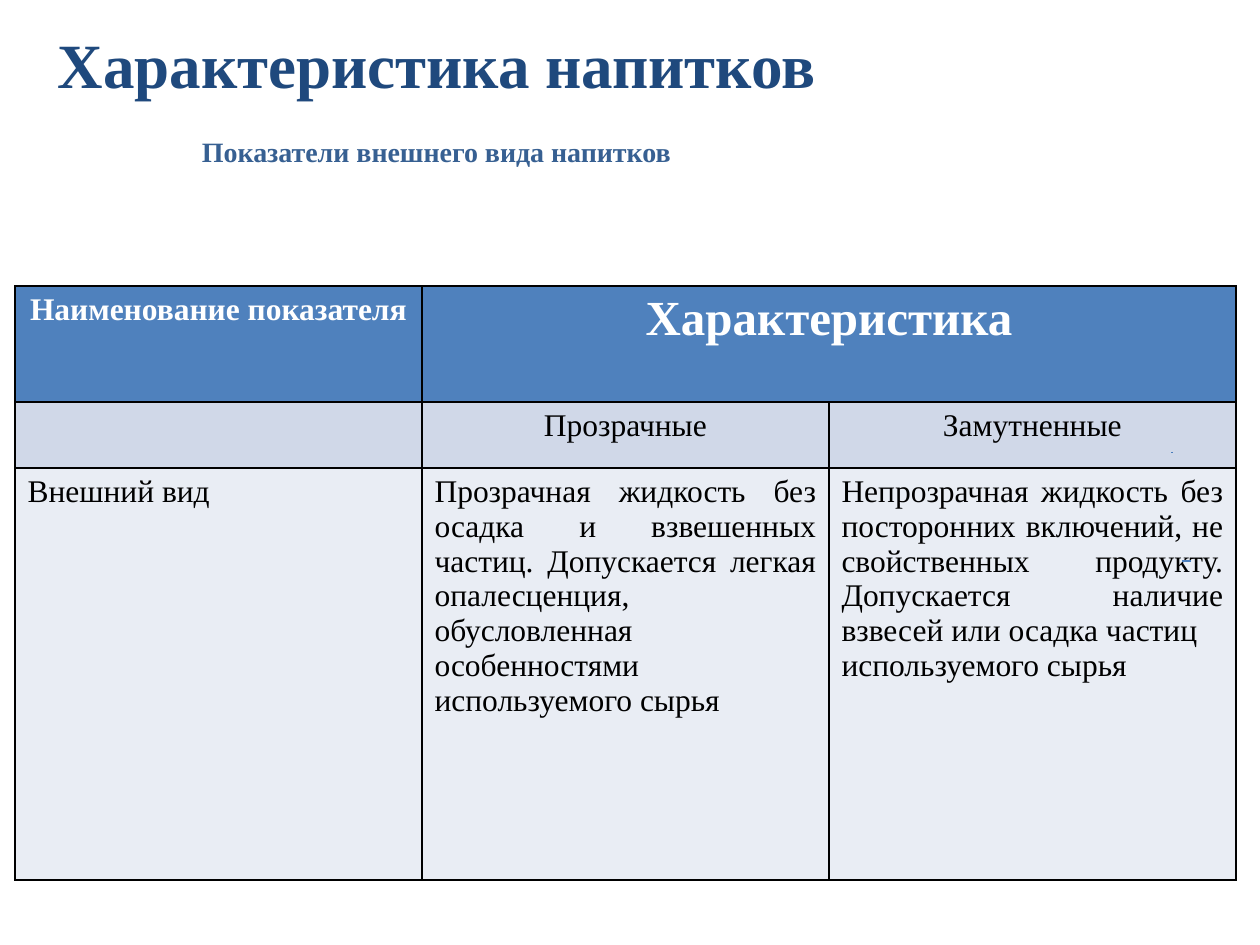
from lxml import etree
from pptx import Presentation
from pptx import util as u
from pptx.dml.color import RGBColor
from pptx.enum import shapes, text
from pptx.oxml import ns

PX = 914400 / 126
FONT = "Times New Roman"
AL = text.PP_ALIGN
HEADER, SUBHEADER, BODY = "4F81BD", "D0D8E8", "E9EDF4"
WHITE, BLACK = "FFFFFF", "000000"

ROWS = [
    (116, HEADER, ["Наименование показателя", "Характеристика", ""]),
    (66, SUBHEADER, ["", "Прозрачные", "Замутненные"]),
    (412, BODY, [
        "Внешний вид",
        "Прозрачная жидкость без осадка и взвешенных частиц. Допускается легкая "
        "опалесценция, обусловленная особенностями используемого сырья",
        "Непрозрачная жидкость без посторонних включений, не свойственных продукту. "
        "Допускается наличие взвесей или осадка частиц\nиспользуемого сырья",
    ]),
]


def px(n):
    """Turn pixels into EMU."""
    return u.Emu(round(n * PX))


def rgb(value):
    """Turn a hex string into a colour."""
    return RGBColor.from_string(value)


def format_paragraph(p, size, color, bold, align):
    """Set the font and alignment of a whole paragraph."""
    p.alignment = align
    p.font.name = FONT
    p.font.size = u.Pt(size)
    p.font.bold = bold
    p.font.color.rgb = rgb(color)


def add_title(s):
    """Fill the title placeholder with the heading and the subheading."""
    sp = s.shapes.title
    sp.left, sp.top, sp.width, sp.height = px(0), px(0), px(873), px(188)
    tf = sp.text_frame
    tf.vertical_anchor = text.MSO_ANCHOR.TOP
    tf.auto_size = text.MSO_AUTO_SIZE.NONE
    tf.margin_top = px(26)
    tf.text = "Характеристика напитков\nПоказатели внешнего вида напитков"
    heading, subheading = tf.paragraphs
    format_paragraph(heading, 36, "1F497D", True, AL.CENTER)
    format_paragraph(subheading, 16, "376092", True, AL.CENTER)
    heading.space_before = u.Pt(0)
    subheading.space_before = u.Pt(19)


def add_borders(cell):
    """Draw a black one-point border round a cell."""
    tc_pr = cell._tc.get_or_add_tcPr()
    for side in ("lnL", "lnR", "lnT", "lnB"):
        ln = etree.SubElement(tc_pr, ns.qn(f"a:{side}"), w=str(u.Pt(1)))
        fill = etree.SubElement(ln, ns.qn("a:solidFill"))
        etree.SubElement(fill, ns.qn("a:srgbClr"), val=BLACK)


def fill_cell(cell, content, fill, size, align):
    """Write a cell and set its border, fill and font."""
    add_borders(cell)
    cell.fill.solid()
    cell.fill.fore_color.rgb = rgb(fill)
    cell.text = content
    header = fill == HEADER
    for p in cell.text_frame.paragraphs:
        format_paragraph(p, size, WHITE if header else BLACK, header, align)


def add_indicator_table(s):
    """Add the table of appearance indicators."""
    height = sum(row[0] for row in ROWS)
    table = s.shapes.add_table(3, 3, px(15), px(286), px(1221), px(height)).table
    for col in table.columns:
        col.width = px(407)
    for i, (row_height, fill, contents) in enumerate(ROWS):
        table.rows[i].height = px(row_height)
        for j, content in enumerate(contents):
            align = AL.CENTER
            if fill == BODY:
                align = AL.JUSTIFY if j else AL.LEFT
            size = 28 if fill == HEADER and j else 18
            fill_cell(table.cell(i, j), content, fill, size, align)
    table.cell(0, 1).merge(table.cell(0, 2))


def add_line(s, x1, y1, x2, y2):
    """Add a thin blue line."""
    line = s.shapes.add_connector(
        shapes.MSO_CONNECTOR.STRAIGHT, px(x1), px(y1), px(x2), px(y2))
    line.line.color.rgb = rgb("4B7EBC")
    line.line.width = u.Pt(0.75)
    etree.SubElement(line._element.spPr, ns.qn("a:effectLst"))


def main():
    """Build and save the slide."""
    prs = Presentation()
    prs.slide_width, prs.slide_height = px(1260), px(945)
    s = prs.slides.add_slide(prs.slide_layouts[5])
    add_title(s)
    add_indicator_table(s)
    add_line(s, 1172, 452, 1172, 453)
    add_line(s, 1182, 561, 1191, 561)
    prs.save("out.pptx")


if __name__ == "__main__":
    main()
